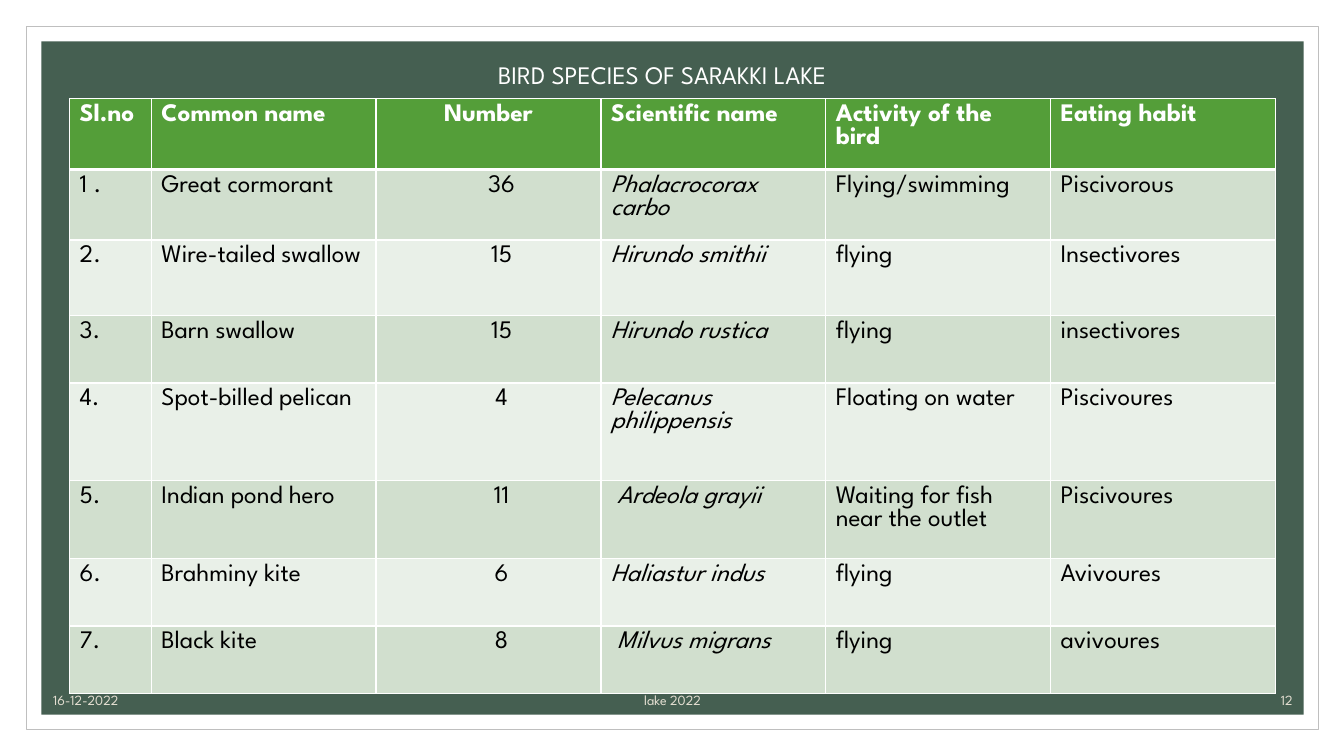
from lxml.etree import SubElement
from pptx import Presentation
from pptx.dml.color import RGBColor
from pptx.enum.shapes import MSO_SHAPE
from pptx.enum.text import MSO_ANCHOR, MSO_AUTO_SIZE, PP_ALIGN
from pptx.oxml.ns import qn
from pptx.util import Inches, Pt

COLORS = {
    "white": "FFFFFF",
    "frame": "BFBFBF",
    "panel": "455F51",
    "footer": "E3DED1",
    "header": "549E39",
    "odd": "D1DFCE",
    "even": "E9F0E8",
    "text": "000000",
}

HEADERS = ["Sl.no", "Common name", "Number", "Scientific name", "Activity of the bird", "Eating habit"]
BIRDS = [
    ["1 .", "Great cormorant", "36", "Phalacrocorax carbo", "Flying/swimming", "Piscivorous"],
    ["2.", "Wire-tailed swallow", "15", "Hirundo smithii", "flying", "Insectivores"],
    ["3.", "Barn swallow", "15", "Hirundo rustica", "flying", "insectivores"],
    ["4.", "Spot-billed pelican", "4", "Pelecanus philippensis", "Floating on water", "Piscivoures"],
    ["5.", "Indian pond hero", "11", " Ardeola grayii", "Waiting for fish near the outlet", "Piscivoures"],
    ["6.", "Brahminy kite", "6", "Haliastur indus", "flying", "Avivoures"],
    ["7.", "Black kite", "8", " Milvus migrans", "flying", "avivoures"],
]
COLUMN_WIDTHS = [0.81] + [2.23] * 5
ROW_HEIGHTS = [0.67, 0.67, 0.75, 0.67, 0.97, 0.77, 0.67, 0.67]
NUMBER_COLUMN = HEADERS.index("Number")
SCIENTIFIC_COLUMN = HEADERS.index("Scientific name")


class SlideBuilder:
    font_name = "League Spartan"

    def __init__(self, slide):
        self.slide = slide

    def color(self, name):
        return RGBColor.from_string(COLORS[name])

    def format_paragraph(self, paragraph, size, color, align=PP_ALIGN.LEFT, bold=False, italic=False):
        paragraph.alignment = align
        font = paragraph.font
        font.name = self.font_name
        font.size = Pt(size)
        font.bold = bold
        font.italic = italic
        font.color.rgb = self.color(color)

    def rectangle(self, left, top, width, height, fill, line=None):
        shape = self.slide.shapes.add_shape(
            MSO_SHAPE.RECTANGLE, Inches(left), Inches(top), Inches(width), Inches(height))
        shape.shadow.inherit = False
        shape.fill.solid()
        shape.fill.fore_color.rgb = self.color(fill)
        if line:
            shape.line.color.rgb = self.color(line)
            shape.line.width = Pt(0.5)
        else:
            shape.line.fill.background()

    def title(self, text, left, top, width, height):
        shape = self.slide.shapes.title
        shape.left, shape.top = Inches(left), Inches(top)
        shape.width, shape.height = Inches(width), Inches(height)
        frame = shape.text_frame
        frame.text = text
        frame.auto_size = MSO_AUTO_SIZE.NONE
        frame.vertical_anchor = MSO_ANCHOR.TOP
        self.format_paragraph(frame.paragraphs[0], 18, "white")
        tree = shape.element.getparent()
        tree.append(shape.element)

    def footer(self, text, left, width, align):
        shape = self.slide.shapes.add_textbox(Inches(left), Inches(6.8), Inches(width), Inches(0.28))
        frame = shape.text_frame
        frame.word_wrap = True
        frame.vertical_anchor = MSO_ANCHOR.BOTTOM
        frame.text = text
        self.format_paragraph(frame.paragraphs[0], 10, "footer", align)

    def borders(self, cell, row):
        properties = cell._tc.get_or_add_tcPr()
        widths = {"lnL": 1, "lnR": 1, "lnT": 3 if row == 1 else 1, "lnB": 3 if row == 0 else 1}
        for side, width in widths.items():
            line = SubElement(properties, qn("a:" + side), w=str(Pt(width)))
            fill = SubElement(line, qn("a:solidFill"))
            SubElement(fill, qn("a:srgbClr"), val=COLORS["white"])

    def cell(self, cell, text, row, column):
        is_header = row == 0
        is_number = column == NUMBER_COLUMN
        self.borders(cell, row)
        cell.fill.solid()
        cell.fill.fore_color.rgb = self.color("header" if is_header else "odd" if row % 2 else "even")
        cell.text = text
        if is_number and not is_header:
            cell.margin_left = Inches(0.36)
        self.format_paragraph(
            cell.text_frame.paragraphs[0], 18,
            "white" if is_header else "text",
            PP_ALIGN.CENTER if is_number else PP_ALIGN.LEFT,
            bold=is_header,
            italic=column == SCIENTIFIC_COLUMN and not is_header)

    def table(self, rows, left, top):
        table = self.slide.shapes.add_table(
            len(rows), len(COLUMN_WIDTHS), Inches(left), Inches(top),
            Inches(sum(COLUMN_WIDTHS)), Inches(sum(ROW_HEIGHTS))).table
        for column, width in zip(table.columns, COLUMN_WIDTHS):
            column.width = Inches(width)
        for row, height in zip(table.rows, ROW_HEIGHTS):
            row.height = Inches(height)
        for row, texts in enumerate(rows):
            for column, text in enumerate(texts):
                self.cell(table.cell(row, column), text, row, column)


def main():
    presentation = Presentation()
    presentation.slide_width = Inches(13.33)
    presentation.slide_height = Inches(7.5)
    builder = SlideBuilder(presentation.slides.add_slide(presentation.slide_layouts[5]))
    builder.rectangle(0.26, 0.26, 12.82, 6.98, "white", "frame")
    builder.rectangle(0.41, 0.41, 12.52, 6.68, "panel")
    builder.footer("16-12-2022", 0.43, 3, PP_ALIGN.LEFT)
    builder.footer("lake 2022", 3.82, 5.7, PP_ALIGN.CENTER)
    builder.footer("12", 11.32, 1.6, PP_ALIGN.RIGHT)
    builder.table([HEADERS] + BIRDS, 0.69, 0.98)
    builder.title("BIRD SPECIES OF SARAKKI LAKE", 4.84, 0.54, 6.67, 0.4)
    presentation.save("out.pptx")


if __name__ == "__main__":
    main()
